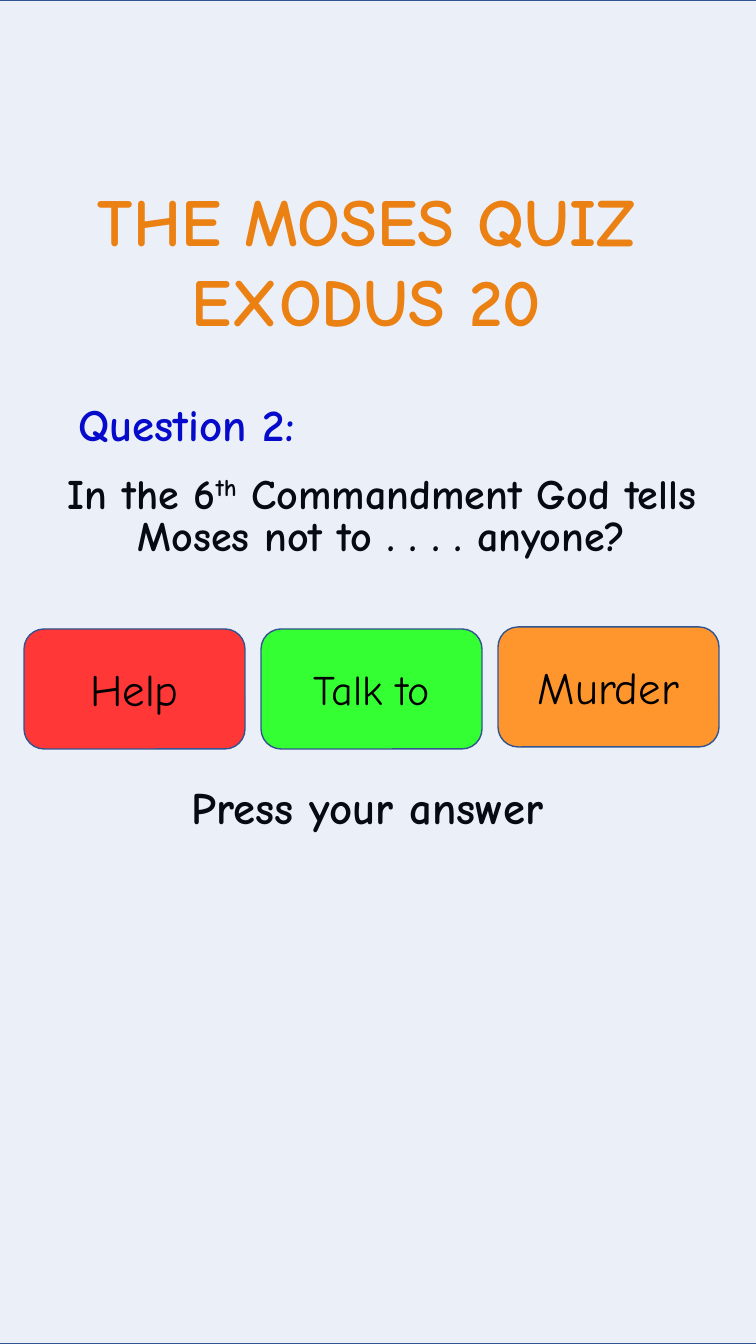
import lxml.etree
import pptx
import pptx.dml.color
import pptx.enum.shapes
import pptx.enum.text
import pptx.oxml
import pptx.oxml.ns
import pptx.util

TITLE = ["THE MOSES QUIZ", "EXODUS 20"]
QUESTION_LABEL = "Question 2:"
QUESTION = [("In the 6", False), ("th", True),
            (" Commandment God tells Moses not to . . . . anyone?", False)]
PROMPT = "Press your answer"
ANSWERS = [("Help", "help", 32, 629), ("Talk to", "talk", 30, 629),
           ("Murder", "murder", 32, 627)]

THEME = {
    "font": "Comic Neue",
    "title_size": 48, "text_size": 32, "question_size": 30,
    "title": "FF8200", "title_edge": "FF0000", "label": "0000CC", "text": "000000",
    "veil": "4472C4", "veil_alpha": 10, "border": "325491",
    "help": "FF3737", "talk": "33FF33", "murder": "FF962D",
}

SLIDE_W, SLIDE_H = 756, 1344
BUTTON_LEFT, BUTTON_W, BUTTON_H, BUTTON_PITCH = 24, 221, 120, 237
CENTER = pptx.enum.text.PP_ALIGN.CENTER
LEFT = pptx.enum.text.PP_ALIGN.LEFT
SHAPES = pptx.enum.shapes.MSO_SHAPE


def px(n):
    return pptx.util.Emu(round(n * 914400 / 100.8))


def rgb(name):
    return pptx.dml.color.RGBColor.from_string(THEME[name])


def write(p, runs, size, color, bold=True, align=CENTER):
    p.alignment = align
    p.font.name = THEME["font"]
    p.font.size = pptx.util.Pt(size)
    p.font.bold = bold
    p.font.color.rgb = rgb(color)
    for text, raised in runs:
        r = p.add_run()
        r.text = text
        if raised:
            r.font._element.set("baseline", "30000")


def add_text(s, box, lines, size, color, wrap=True, align=CENTER):
    tf = s.shapes.add_textbox(*map(px, box)).text_frame
    tf.word_wrap = wrap
    for i, runs in enumerate(lines):
        p = tf.add_paragraph() if i else tf.paragraphs[0]
        write(p, runs, size, color, align=align)
    return tf


def add_panel(s, kind, box, fill):
    sp = s.shapes.add_shape(kind, *map(px, box))
    sp.shadow.inherit = False
    sp.fill.solid()
    sp.fill.fore_color.rgb = rgb(fill)
    sp.line.color.rgb = rgb("border")
    sp.line.width = pptx.util.Pt(1)
    return sp


def outline(p, color, width):
    ln = pptx.oxml.parse_xml(
        f'<a:ln {pptx.oxml.ns.nsdecls("a")} w="{pptx.util.Pt(width)}"><a:solidFill>'
        f'<a:srgbClr val="{THEME[color]}"/></a:solidFill></a:ln>')
    p.font._element.insert(0, ln)


def main():
    prs = pptx.Presentation()
    prs.slide_width, prs.slide_height = px(SLIDE_W), px(SLIDE_H)
    s = prs.slides.add_slide(prs.slide_layouts[6])

    tf = add_text(s, (19, 174, 695, 173), [[(line, False)] for line in TITLE],
                  THEME["title_size"], "title", wrap=False)
    for p in tf.paragraphs:
        outline(p, "title_edge", 1.06)

    add_text(s, (47, 392, 279, 65), [[(QUESTION_LABEL, False)]],
             THEME["text_size"], "label", wrap=False)

    tf = add_text(s, (16, 471, 732, 141), [QUESTION], THEME["question_size"], "text")
    tf.paragraphs[0].line_spacing = pptx.util.Pt(30)
    tf.paragraphs[0].space_before = pptx.util.Pt(7.5)

    tf = add_text(s, (182, 781, 425, 73), [[(PROMPT, False)]],
                  THEME["text_size"], "text", align=LEFT)
    tf.paragraphs[0].line_spacing = 0.9
    tf.paragraphs[0].space_before = pptx.util.Pt(7.5)

    veil = add_panel(s, SHAPES.RECTANGLE, (-30, 0, 804, SLIDE_H), "veil")
    color = veil.fill._xPr.find(".//" + pptx.oxml.ns.qn("a:srgbClr"))
    alpha = lxml.etree.SubElement(color, pptx.oxml.ns.qn("a:alpha"))
    alpha.set("val", str(THEME["veil_alpha"] * 1000))

    for i, (answer, fill, size, top) in enumerate(ANSWERS):
        box = (BUTTON_LEFT + i * BUTTON_PITCH, top, BUTTON_W, BUTTON_H)
        tf = add_panel(s, SHAPES.ROUNDED_RECTANGLE, box, fill).text_frame
        tf.vertical_anchor = pptx.enum.text.MSO_ANCHOR.MIDDLE
        write(tf.paragraphs[0], [(answer, False)], size, "text", bold=False)

    prs.save("out.pptx")


if __name__ == "__main__":
    main()
